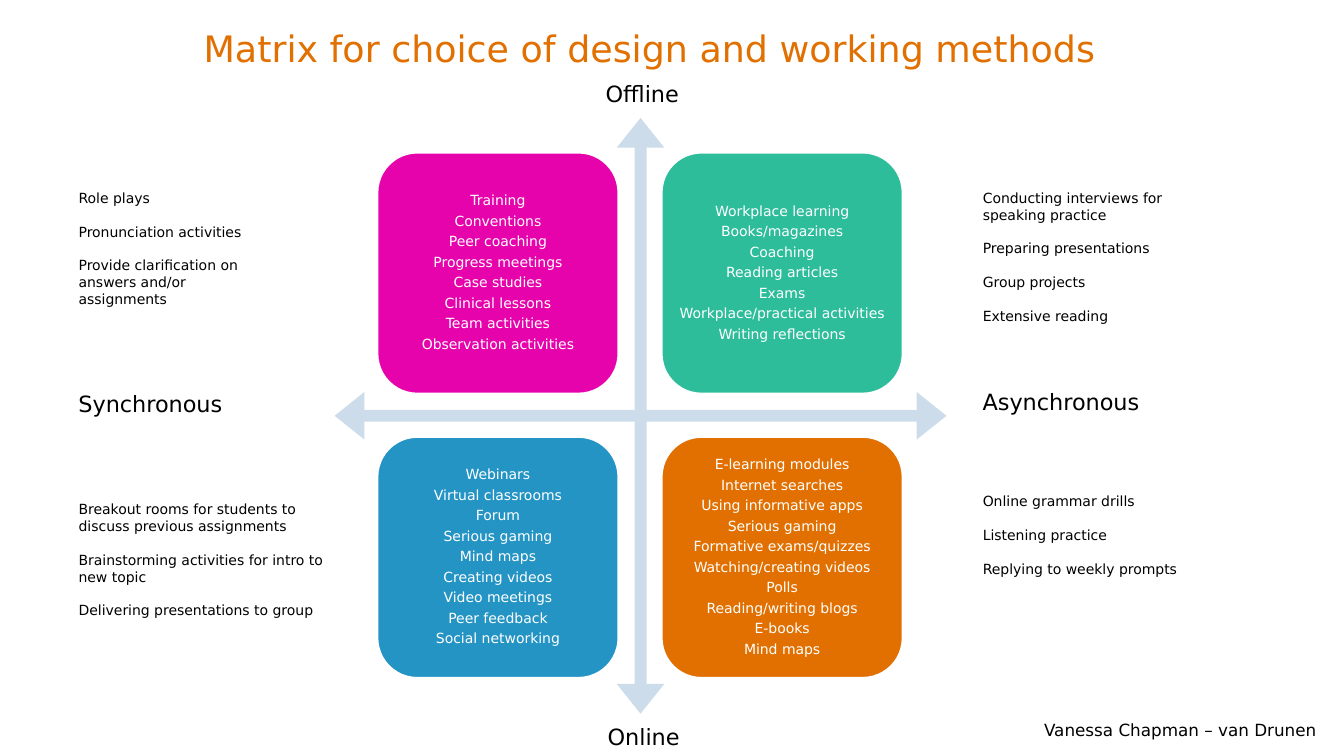
from lxml import etree
from pptx import Presentation
from pptx.dml.color import RGBColor
from pptx.enum import shapes, text
from pptx.oxml import ns
from pptx.util import Pt

FONT = "DejaVu Sans"
CARD, PITCH = 172.8, 203.04
CARD_LEFT, CARD_TOP = 269.28, 108.72
LEFT, RIGHT = 48.96, 694.8

CARDS = [
    (0, 0, "E703AB", ["Training", "Conventions", "Peer coaching", "Progress meetings",
                      "Case studies", "Clinical lessons", "Team activities",
                      "Observation activities"]),
    (1, 0, "2DBD9B", ["Workplace learning", "Books/magazines", "Coaching",
                      "Reading articles", "Exams", "Workplace/practical activities",
                      "Writing reflections"]),
    (0, 1, "2494C5", ["Webinars", "Virtual classrooms", "Forum", "Serious gaming",
                      "Mind maps", "Creating videos", "Video meetings", "Peer feedback",
                      "Social networking"]),
    (1, 1, "E17000", ["E-learning modules", "Internet searches", "Using informative apps",
                      "Serious gaming", "Formative exams/quizzes",
                      "Watching/creating videos", "Polls", "Reading/writing blogs",
                      "E-books", "Mind maps"]),
]

EXAMPLES = [
    (1, (LEFT, 131.76, 147.6, 92.16),
     ["Role plays", "Pronunciation activities",
      "Provide clarification on answers and/or assignments"]),
    (2, (RIGHT, 131.76, 147.6, 104.4),
     ["Conducting interviews for speaking practice", "Preparing presentations",
      "Group projects", "Extensive reading"]),
    (3, (LEFT, 354.24, 192.96, 104.4),
     ["Breakout rooms for students to discuss previous assignments",
      "Brainstorming activities for intro to new topic",
      "Delivering presentations to group"]),
    (4, (RIGHT, 348.48, 181.44, 67.68),
     ["Online grammar drills", "Listening practice", "Replying to weekly prompts"]),
]

LABELS = [
    ("Offline", 16, (425.52, 54, 71.28, 26.64)),
    ("Online", 16, (426.96, 513.36, 84.96, 26.64)),
    ("Synchronous", 16, (LEFT, 275.04, 118.8, 26.64)),
    ("Asynchronous", 16, (RIGHT, 273.6, 136.08, 26.64)),
    ("Vanessa Chapman – van Drunen", 12, (738.72, 510.48, 221.04, 21.6)),
]


def rgb(value):
    """Turn a hex string into a colour."""
    return RGBColor.from_string(value)


def place(sp, box):
    """Move and size a shape to a box given in points."""
    sp.left, sp.top, sp.width, sp.height = (Pt(v) for v in box)


def set_inset(tf, inset):
    """Give all four sides of a text frame the same inset."""
    tf.margin_left = tf.margin_right = tf.margin_top = tf.margin_bottom = Pt(inset)


def write(tf, lines, size, color, align=text.PP_ALIGN.LEFT, before=0, after=0, spacing=1.0):
    """Write lines as evenly spaced paragraphs in one style."""
    tf.word_wrap = True
    tf.text = "\n".join(lines)
    for i, p in enumerate(tf.paragraphs):
        p.alignment = align
        p.line_spacing = spacing
        p.space_before = Pt(before if i else 0)
        p.space_after = Pt(after)
        for r in p.runs:
            r.font.name, r.font.size, r.font.bold = FONT, Pt(size), False
            r.font.color.rgb = rgb(color)


def add_title(s, title):
    """Fill the title placeholder."""
    sp = s.shapes.title
    place(sp, (145.44, 18.72, 700, 31.68))
    tf = sp.text_frame
    set_inset(tf, 0)
    tf.vertical_anchor = text.MSO_ANCHOR.TOP
    write(tf, [title], 26, "E17000")


def add_axes(s):
    """Draw the four-way arrow behind the cards."""
    sp = s.shapes.add_shape(shapes.MSO_SHAPE.QUAD_ARROW,
                            Pt(239.04), Pt(84.24), Pt(437.04), Pt(425.52))
    for i, value in enumerate((0.02, 0.04, 0.05)):
        sp.adjustments[i] = value
    sp.shadow.inherit = False
    sp.fill.solid()
    sp.fill.fore_color.rgb = rgb("CDDCEA")
    sp.line.fill.background()


def add_card(s, col, row, color, lines):
    """Draw one quadrant card with its centred methods."""
    sp = s.shapes.add_shape(shapes.MSO_SHAPE.ROUNDED_RECTANGLE,
                            Pt(CARD_LEFT + col * PITCH), Pt(CARD_TOP + row * PITCH),
                            Pt(CARD), Pt(CARD))
    sp.shadow.inherit = False
    sp.fill.solid()
    sp.fill.fore_color.rgb = rgb(color)
    sp.line.color.rgb = rgb("FFFFFF")
    sp.line.width = Pt(2)
    tf = sp.text_frame
    set_inset(tf, 2.88)
    tf.vertical_anchor = text.MSO_ANCHOR.MIDDLE
    write(tf, lines, 10, "FFFFFF", text.PP_ALIGN.CENTER, after=3.8, spacing=0.9)


def add_examples(s, idx, box, lines):
    """Fill a body placeholder with an unbulleted list of examples."""
    sp = next(ph for ph in s.placeholders if ph.placeholder_format.idx == idx)
    place(sp, box)
    tf = sp.text_frame
    tf.auto_size = text.MSO_AUTO_SIZE.NONE
    tf.vertical_anchor = text.MSO_ANCHOR.TOP
    write(tf, lines, 10, "000000", before=12)
    for p in tf.paragraphs:
        pPr = p._p.get_or_add_pPr()
        pPr.set("marL", "0")
        pPr.set("indent", "0")
        etree.SubElement(pPr, ns.qn("a:buNone"))


def add_label(s, label, size, box):
    """Add a one-line label."""
    sp = s.shapes.add_textbox(*(Pt(v) for v in box))
    write(sp.text_frame, [label], size, "000000")


def main():
    """Build the matrix slide."""
    prs = Presentation()
    prs.slide_width, prs.slide_height = Pt(960), Pt(540)
    s = prs.slides.add_slide(prs.slide_layouts.get_by_name("Comparison"))
    add_title(s, "Matrix for choice of design and working methods")
    add_axes(s)
    for card in CARDS:
        add_card(s, *card)
    for label in LABELS:
        add_label(s, *label)
    for examples in EXAMPLES:
        add_examples(s, *examples)
    prs.save("out.pptx")


if __name__ == "__main__":
    main()
